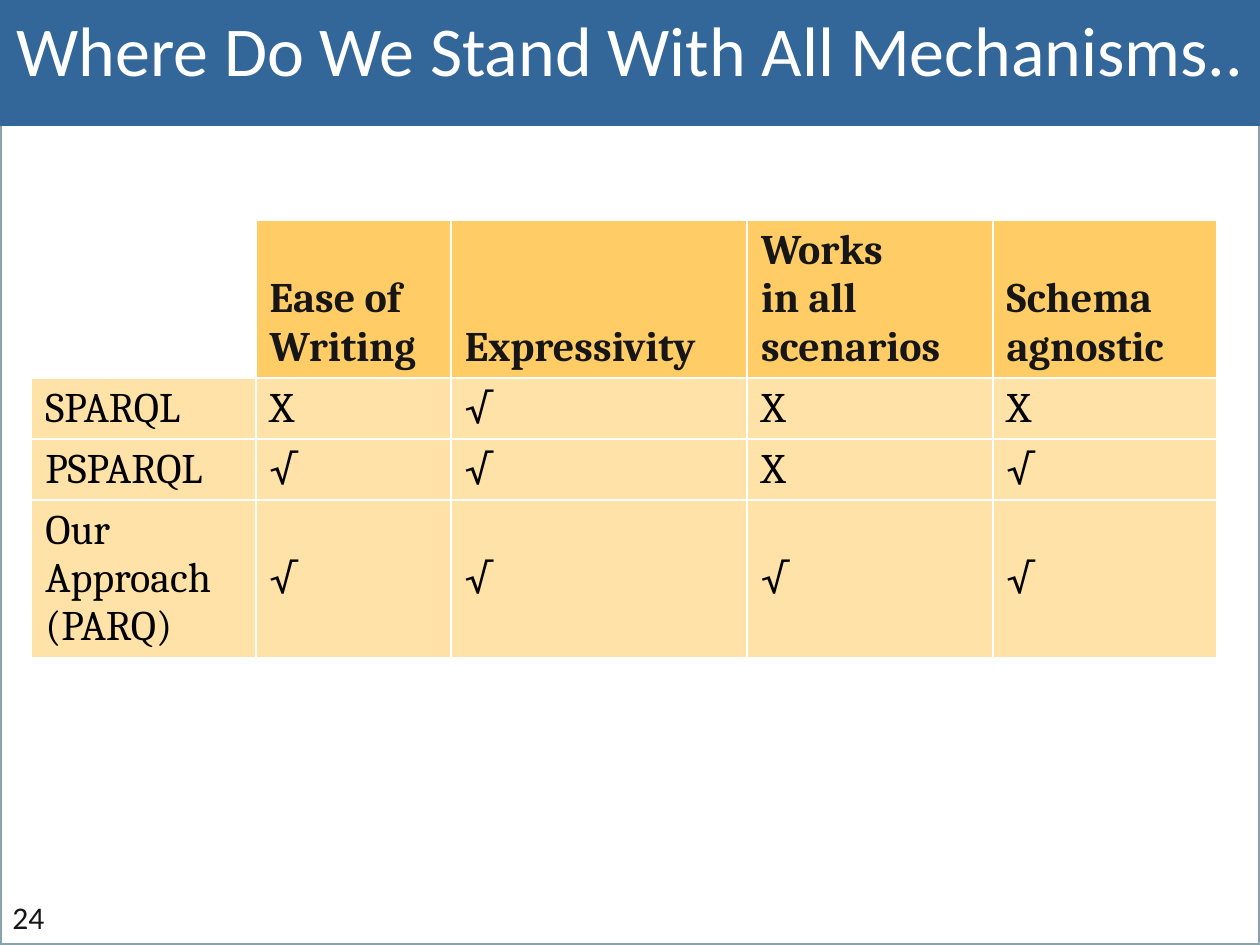
import lxml.etree
import pptx
import pptx.dml.color
import pptx.enum.shapes
import pptx.enum.text
import pptx.oxml.ns
import pptx.util
from pptx.util import Inches

RGBColor = pptx.dml.color.RGBColor
Anchor = pptx.enum.text.MSO_ANCHOR
qn = pptx.oxml.ns.qn

BACKDROP = RGBColor(0xD8, 0xD8, 0xD8)
WHITE = RGBColor(0xFF, 0xFF, 0xFF)
FRAME_LINE = RGBColor(0x87, 0xA3, 0xAC)
TITLE_BLUE = RGBColor(0x33, 0x66, 0x99)
HEADER_GOLD = RGBColor(0xFF, 0xCC, 0x66)
BODY_CREAM = RGBColor(0xFF, 0xE2, 0xA7)
DARK = RGBColor(0x16, 0x16, 0x16)
BLACK = RGBColor(0, 0, 0)

COLUMN_WIDTHS = [1.78, 1.55, 2.35, 1.95, 1.78]
ROW_HEIGHT = 0.41
COMPARISON = [
    ["", "Ease of Writing", "Expressivity", "Works\nin all scenarios", "Schema agnostic"],
    ["SPARQL", "X", "√", "X", "X"],
    ["PSPARQL", "√", "√", "X", "√"],
    ["Our Approach\n(PARQ)", "√", "√", "√", "√"],
]


class SlideBuilder:
    """Holds the fonts and the current slide, and adds each kind of element."""

    heading_font = "Calibri"
    table_font = "Cambria"

    def __init__(self, slide):
        self.slide = slide
        slide.background.fill.solid()
        slide.background.fill.fore_color.rgb = BACKDROP

    def add_text(self, text_frame, text, font, size, color, bold=False, alignment=None):
        for index, line in enumerate(text.split("\n")):
            paragraph = text_frame.add_paragraph() if index else text_frame.paragraphs[0]
            paragraph.alignment = alignment
            run = paragraph.add_run()
            run.text = line
            run.font.name = font
            run.font.size = pptx.util.Pt(size)
            run.font.color.rgb = color
            run.font.bold = bold

    def frame(self, width, height):
        shape = self.slide.shapes.add_shape(
            pptx.enum.shapes.MSO_SHAPE.RECTANGLE, 0, 0, width, height)
        shape.shadow.inherit = False
        shape.fill.solid()
        shape.fill.fore_color.rgb = WHITE
        shape.line.color.rgb = FRAME_LINE
        shape.line.width = pptx.util.Pt(2)
        self.slide.shapes.title._element.addprevious(shape._element)

    def title(self, text, width, height):
        title = self.slide.shapes.title
        title.left, title.top, title.width, title.height = 0, 0, width, height
        title.fill.solid()
        title.fill.fore_color.rgb = TITLE_BLUE
        text_frame = title.text_frame
        text_frame.auto_size = pptx.enum.text.MSO_AUTO_SIZE.NONE
        text_frame.vertical_anchor = Anchor.TOP
        self.add_text(text_frame, text, self.heading_font, 40, WHITE,
                      alignment=pptx.enum.text.PP_ALIGN.CENTER)

    def border(self, cell):
        properties = cell._tc.get_or_add_tcPr()
        for index, side in enumerate(("a:lnL", "a:lnR", "a:lnT", "a:lnB")):
            line = lxml.etree.Element(qn(side), w=str(pptx.util.Pt(1)))
            fill = lxml.etree.SubElement(line, qn("a:solidFill"))
            lxml.etree.SubElement(fill, qn("a:srgbClr"), val=str(WHITE))
            properties.insert(index, line)

    def cell(self, cell, text, is_header):
        self.border(cell)
        if not text:
            cell.fill.background()
            return
        cell.fill.solid()
        cell.fill.fore_color.rgb = HEADER_GOLD if is_header else BODY_CREAM
        cell.margin_left = cell.margin_right = Inches(0.11)
        cell.margin_top = cell.margin_bottom = Inches(0.05)
        cell.vertical_anchor = Anchor.BOTTOM if is_header else Anchor.MIDDLE
        self.add_text(cell.text_frame, text, self.table_font, 24,
                      DARK if is_header else BLACK, bold=is_header)

    def table(self, rows, left, top, width, height):
        graphic_frame = self.slide.shapes.add_table(
            len(rows), len(COLUMN_WIDTHS), left, top, width, height)
        table = graphic_frame.table
        table.first_row = table.horz_banding = False
        for column, column_width in zip(table.columns, COLUMN_WIDTHS):
            column.width = Inches(column_width)
        for row_index, texts in enumerate(rows):
            table.rows[row_index].height = Inches(ROW_HEIGHT)
            for column_index, text in enumerate(texts):
                self.cell(table.cell(row_index, column_index), text, row_index == 0)
        graphic_frame.width, graphic_frame.height = width, height

    def page_number(self, text, left, top, width, height):
        text_box = self.slide.shapes.add_textbox(left, top, width, height)
        text_box.text_frame.word_wrap = True
        self.add_text(text_box.text_frame, text, self.heading_font, 18, DARK)


def main():
    presentation = pptx.Presentation()
    presentation.slide_width = Inches(10)
    presentation.slide_height = Inches(7.5)
    builder = SlideBuilder(presentation.slides.add_slide(presentation.slide_layouts[5]))
    builder.frame(Inches(10), Inches(7.5))
    builder.title("Where Do We Stand With All Mechanisms..", Inches(10), Inches(1))
    builder.table(COMPARISON, Inches(0.25), Inches(1.75), Inches(9.42), Inches(3.6))
    builder.page_number("24", Inches(0), Inches(7.08), Inches(0.5), Inches(0.42))
    presentation.save("out.pptx")


if __name__ == "__main__":
    main()
